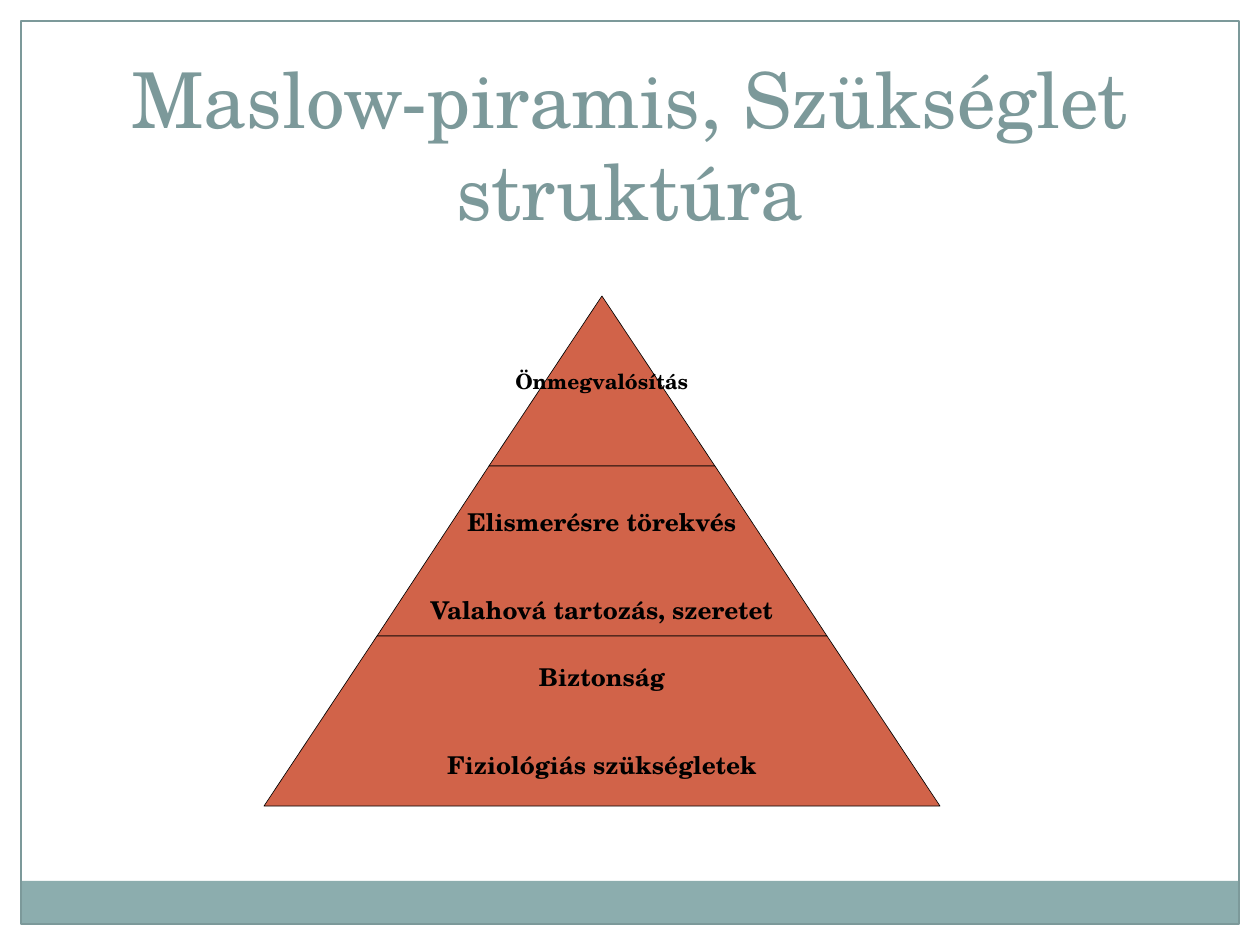
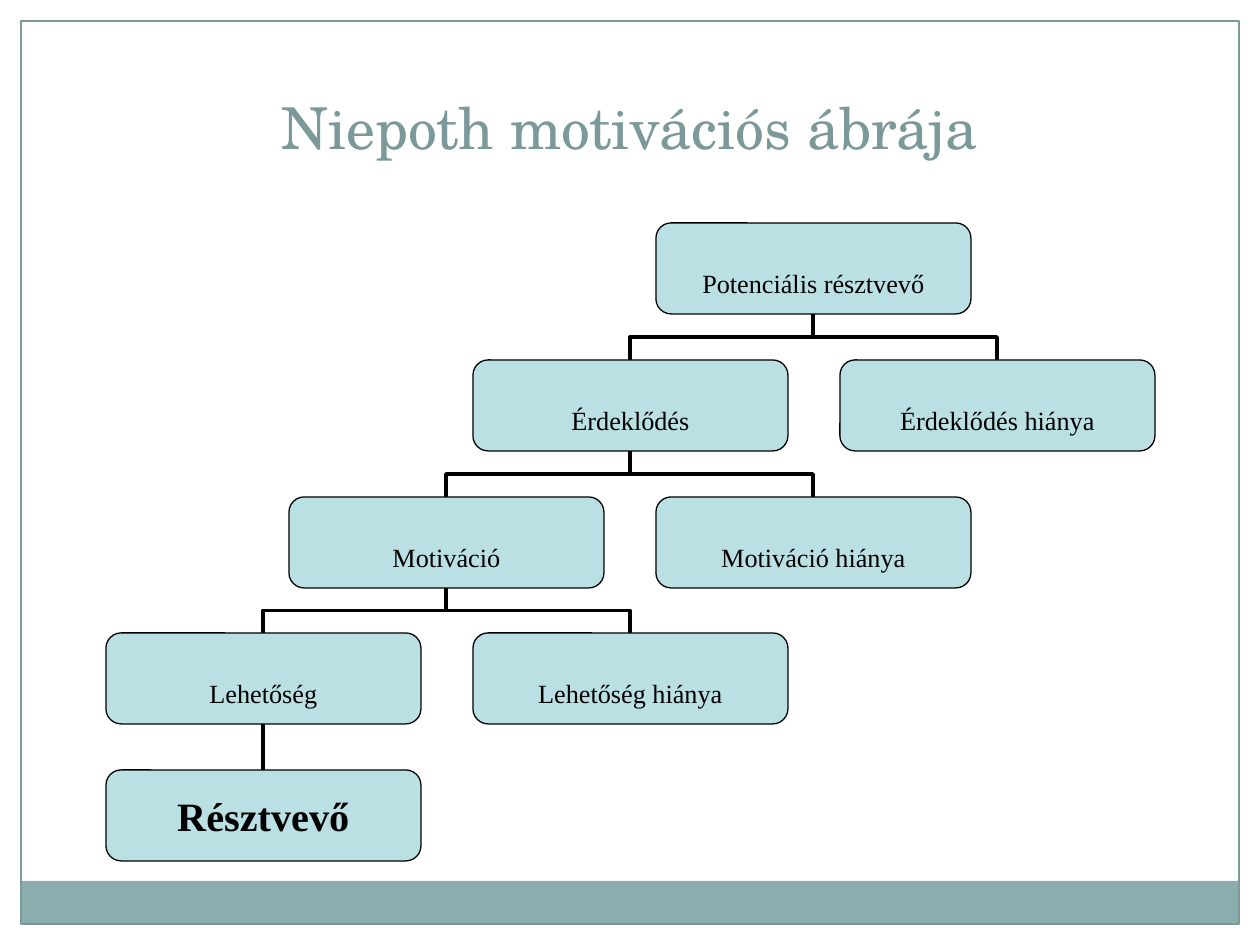
from lxml import etree
from pptx import Presentation, util as u
from pptx.dml.color import RGBColor
from pptx.enum import shapes, text
from pptx.oxml import ns

PX = 914400 // 126  # one px in EMU
COLORS = {"title": "7C999A", "band": "8CADAE", "tier": "D16349",
          "box": "BBE0E3", "ink": "000000"}
SERIF, TIMES = "TeX Gyre Schola", "Times New Roman"


def style(sp, fill=None, line=None, width=0.75):
    sp.shadow.inherit = False
    if fill:
        sp.fill.solid()
        sp.fill.fore_color.rgb = RGBColor.from_string(COLORS[fill])
    else:
        sp.fill.background()
    if line:
        sp.line.color.rgb = RGBColor.from_string(COLORS[line])
        sp.line.width = u.Pt(width)
    else:
        sp.line.fill.background()


def write(sp, lines, size, font, color="ink", bold=False, gap=0,
          anchor=text.MSO_ANCHOR.MIDDLE, wrap=True, inset=0, top=0):
    """Centre lines in a shape; gap is in points, inset and top are in px."""
    tf = sp.text_frame
    tf.word_wrap = wrap
    tf.vertical_anchor = anchor
    tf.margin_left = tf.margin_right = 2 * inset * PX
    tf.margin_bottom = inset * PX
    tf.margin_top = (inset + top) * PX
    for i, line in enumerate(lines):
        p = tf.add_paragraph() if i else tf.paragraphs[0]
        p.alignment = text.PP_ALIGN.CENTER
        if i:
            p.space_before = u.Pt(gap)
        r = p.add_run()
        r.text = line
        r.font.size = u.Pt(size)
        r.font.name = font
        r.font.bold = bold
        r.font.color.rgb = RGBColor.from_string(COLORS[color])


prs = Presentation()
prs.slide_width, prs.slide_height = 1260 * PX, 945 * PX

# Shared band, frame and title: title, left, width, height, size
titles = [("Maslow-piramis, Szükséglet struktúra", 0, 1260, 231, 44),
          ("Niepoth motivációs ábrája", 106, 1048, 156, 33)]
slides = []
for title, left, width, height, size in titles:
    s = prs.slides.add_slide(prs.slide_layouts[6])
    slides.append(s)
    for y, h, fill, line in [(881, 43, "band", None), (21, 903, None, "title")]:
        sp = s.shapes.add_shape(shapes.MSO_SHAPE.RECTANGLE,
                                21 * PX, y * PX, 1218 * PX, h * PX)
        style(sp, fill, line)
    sp = s.shapes.add_textbox(left * PX, 11 * PX, width * PX, height * PX)
    write(sp, [title], size, SERIF, "title",
          anchor=text.MSO_ANCHOR.BOTTOM, inset=6)

pyramid_slide, tree_slide = slides

# Pyramid: three tiers of equal height
APEX_X, APEX_Y, TIER_H, BASE_HALF = 602, 296, 170, 338
tiers = [(["Önmegvalósítás"], 12, 0),
         (["Elismerésre törekvés", "Valahová tartozás, szeretet"], 14, 30),
         (["Biztonság", "Fiziológiás szükségletek"], 14, 0)]
for i, (lines, size, top) in enumerate(tiers):
    upper, lower = (round(BASE_HALF * n / len(tiers)) for n in (i, i + 1))
    y = APEX_Y + i * TIER_H
    corners = [(APEX_X - upper, y), (APEX_X + upper, y),
               (APEX_X + lower, y + TIER_H)]
    if not upper:
        corners.pop(0)
    fb = pyramid_slide.shapes.build_freeform(APEX_X - lower, y + TIER_H, scale=PX)
    fb.add_line_segments(corners, close=True)
    sp = fb.convert_to_shape()
    style(sp, "tier", "ink", 0.37)
    write(sp, lines, size, SERIF, bold=True, gap=33.5, wrap=False, top=top)

# Motivation tree: label, column, row, column of parent one row above
BOX_W, BOX_H = 315, 91
nodes = [("Potenciális résztvevő", 3, 0, None),
         ("Érdeklődés", 2, 1, 3), ("Érdeklődés hiánya", 4, 1, 3),
         ("Motiváció", 1, 2, 2), ("Motiváció hiánya", 3, 2, 2),
         ("Lehetőség", 0, 3, 1), ("Lehetőség hiánya", 2, 3, 1),
         ("Résztvevő", 0, 4, 0)]
lefts = [106 + 367 * c // 2 for c in range(5)]
tops = [223 + (547 * r + 2) // 4 for r in range(5)]

for label, col, row, parent in nodes:
    if parent is None:
        continue
    x1, x2 = (lefts[c] + BOX_W // 2 for c in (parent, col))
    y1, y2 = tops[row - 1] + BOX_H, tops[row]
    if x1 == x2:
        cn = tree_slide.shapes.add_connector(
            shapes.MSO_CONNECTOR.STRAIGHT, x1 * PX, y1 * PX, x2 * PX, y2 * PX)
    else:
        # A quarter turn makes the elbow leave and arrive vertically
        mid_x, mid_y = (x1 + x2) * PX // 2, (y1 + y2) * PX // 2
        dx, dy = (y2 - y1) * PX // 2, abs(x2 - x1) * PX // 2
        if x2 > x1:
            dx = -dx
        cn = tree_slide.shapes.add_connector(
            shapes.MSO_CONNECTOR.ELBOW,
            mid_x - dx, mid_y - dy, mid_x + dx, mid_y + dy)
        turn = 90 if x2 > x1 else 270
        cn.element.spPr.find(ns.qn("a:xfrm")).set("rot", str(turn * 60000))
    cn.line.color.rgb = RGBColor.from_string(COLORS["ink"])
    cn.line.width = u.Pt(2.25)
    etree.SubElement(cn.element.spPr, ns.qn("a:effectLst"))

for label, col, row, parent in nodes:
    sp = tree_slide.shapes.add_shape(shapes.MSO_SHAPE.ROUNDED_RECTANGLE,
                                     lefts[col] * PX, tops[row] * PX,
                                     BOX_W * PX, BOX_H * PX)
    style(sp, "box", "ink")
    goal = row == 4
    write(sp, [label], 23 if goal else 15, TIMES, bold=goal,
          top=0 if goal else 30)

prs.save("out.pptx")
